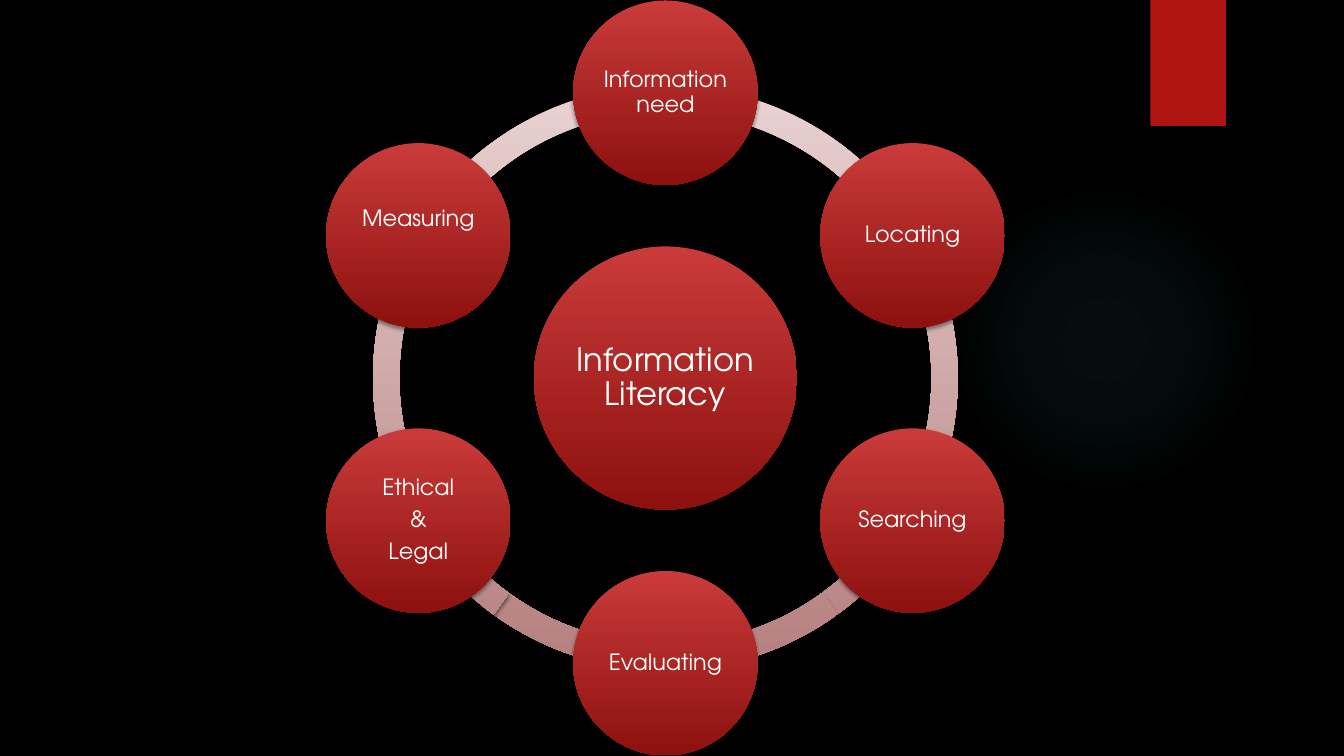
from dataclasses import dataclass
from math import cos, radians, sin

from lxml import etree
from pptx import Presentation
from pptx.dml.color import RGBColor
from pptx.enum.shapes import MSO_SHAPE
from pptx.enum.text import MSO_ANCHOR, PP_ALIGN
from pptx.oxml import parse_xml
from pptx.oxml.ns import nsdecls, qn
from pptx.util import Inches, Pt


@dataclass(frozen=True)
class Theme:
    font: str = "TeX Gyre Adventor"
    background: str = "000000"
    text: str = "FFFFFF"
    accent: str = "B01513"
    glow: str = "50B9C1"
    shadow: str = "000000"
    disc: tuple = ("C93B3A", "8D110F")
    ring: tuple = ("E8D2D1", "B57F7F")
    hub_size: float = 23
    node_size: float = 16


THEME = Theme()
CENTER_X, CENTER_Y = 6.6, 3.75
ORBIT = 2.83
RING_SIZE, HUB_SIZE, NODE_SIZE = 5.8, 2.61, 1.83
RING_ANGLES = (18, 54, 90, 126, 162, 198)
RING_THICKNESS = 0.045
# Clockwise from the top: paragraphs and the extra bottom inset that raises them
NODES = (
    (["Information need"], 0),
    (["Locating"], 0),
    (["Searching"], 0),
    (["Evaluating"], 0),
    (["Ethical", "&", "Legal"], 0),
    (["Measuring"], 0.32),
)


def add_plain_shape(slide, kind, left, top, width, height):
    shape = slide.shapes.add_shape(
        kind, Inches(left), Inches(top), Inches(width), Inches(height))
    shape.shadow.inherit = False
    shape.line.fill.background()
    return shape


def add_centered_shape(slide, kind, x, y, size):
    return add_plain_shape(slide, kind, x - size / 2, y - size / 2, size, size)


def fill_solid(shape, color):
    shape.fill.solid()
    shape.fill.fore_color.rgb = RGBColor.from_string(color)


def fill_downward(shape, colors):
    """Fill with a gradient that runs from top to bottom."""
    shape.fill.gradient()
    shape.fill.gradient_angle = 270
    for stop, color, position in zip(shape.fill.gradient_stops, colors, (0, 1)):
        stop.color.rgb = RGBColor.from_string(color)
        stop.position = position


def add_shadow(shape):
    effects = shape.element.spPr.find(qn("a:effectLst"))
    effects.append(parse_xml(
        f'<a:outerShdw {nsdecls("a")} blurRad="{Pt(3)}" dist="{Pt(2)}" '
        f'dir="5400000" rotWithShape="0"><a:srgbClr val="{THEME.shadow}">'
        '<a:alpha val="45000"/></a:srgbClr></a:outerShdw>'))


def add_glow(slide, left, top, size):
    """Add a circle that fades out from its middle."""
    glow = add_plain_shape(slide, MSO_SHAPE.OVAL, left, top, size, size)
    glow.fill.gradient()
    gradient = glow.element.spPr.find(qn("a:gradFill"))
    for child in list(gradient):
        gradient.remove(child)
    stops = etree.SubElement(gradient, qn("a:gsLst"))
    for position, opacity in ((0, 7), (36, 6), (69, 0)):
        stop = etree.SubElement(stops, qn("a:gs"), pos=str(position * 1000))
        color = etree.SubElement(stop, qn("a:srgbClr"), val=THEME.glow)
        etree.SubElement(color, qn("a:alpha"), val=str(opacity * 1000))
    circle = etree.SubElement(gradient, qn("a:path"), path="circle")
    etree.SubElement(circle, qn("a:fillToRect"),
                     dict.fromkeys("ltrb", "50000"))


def add_ring_arc(slide, start, end):
    arc = add_centered_shape(
        slide, MSO_SHAPE.BLOCK_ARC, CENTER_X, CENTER_Y, RING_SIZE)
    # Angles are stored in 60000ths of a degree, adjustments in 100000ths
    arc.adjustments[0] = start * 0.6
    arc.adjustments[1] = end * 0.6
    arc.adjustments[2] = RING_THICKNESS
    fill_downward(arc, THEME.ring)
    add_shadow(arc)


def add_disc(slide, x, y, size, lines, font_size, inset, raise_by=0):
    disc = add_centered_shape(slide, MSO_SHAPE.OVAL, x, y, size)
    fill_downward(disc, THEME.disc)
    add_shadow(disc)
    frame = disc.text_frame
    frame.word_wrap = True
    frame.vertical_anchor = MSO_ANCHOR.MIDDLE
    frame.margin_left = frame.margin_right = frame.margin_top = Inches(inset)
    frame.margin_bottom = Inches(inset + raise_by)
    for index, line in enumerate(lines):
        paragraph = frame.add_paragraph() if index else frame.paragraphs[0]
        paragraph.alignment = PP_ALIGN.CENTER
        paragraph.line_spacing = 0.9
        paragraph.space_after = Pt(font_size * 0.35)
        run = paragraph.add_run()
        run.text = line
        run.font.name = THEME.font
        run.font.size = Pt(font_size)
        run.font.color.rgb = RGBColor.from_string(THEME.text)


def add_cycle(slide):
    for start, end in zip(RING_ANGLES, RING_ANGLES[1:] + RING_ANGLES[:1]):
        add_ring_arc(slide, start, end)
    add_disc(slide, CENTER_X, CENTER_Y, HUB_SIZE, ["Information Literacy"],
             THEME.hub_size, 0.03)
    for index, (lines, raise_by) in enumerate(NODES):
        angle = radians(index * 360 / len(NODES) - 90)
        add_disc(slide, CENTER_X + ORBIT * cos(angle),
                 CENTER_Y + ORBIT * sin(angle), NODE_SIZE, lines,
                 THEME.node_size, 0.02, raise_by)


def main():
    presentation = Presentation()
    presentation.slide_width = Inches(13.33)
    presentation.slide_height = Inches(7.5)
    slide = presentation.slides.add_slide(presentation.slide_layouts[6])
    fill_solid(slide.background, THEME.background)
    add_glow(slide, 9.41, 1.83, 3.08)
    bookmark = add_plain_shape(slide, MSO_SHAPE.RECTANGLE, 11.41, 0, 0.75, 1.25)
    fill_solid(bookmark, THEME.accent)
    add_shadow(bookmark)
    add_cycle(slide)
    presentation.save("out.pptx")


if __name__ == "__main__":
    main()
